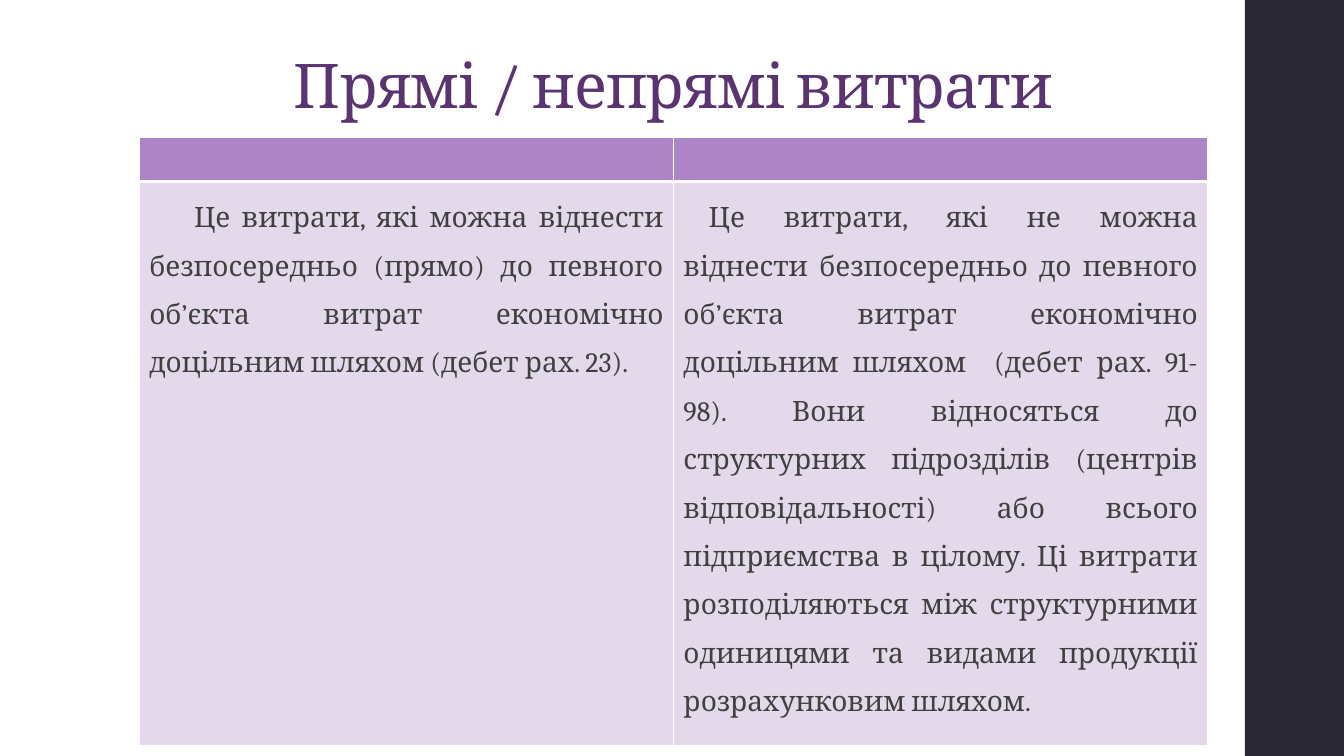
from lxml import etree
from pptx import Presentation
from pptx import util as u
from pptx.dml.color import RGBColor
from pptx.enum import shapes, text
from pptx.oxml.ns import qn

FONT = "Cambria"
WHITE, DARK, PURPLE = "FFFFFF", "292834", "5A3471"
HEADER_FILL, BODY_FILL, BODY_TEXT = "AD84C6", "E3D9EA", "404040"
LEFT, WIDTH = 99.4, 763.2

DIRECT_COSTS = (
    "Це витрати, які можна віднести безпосередньо (прямо) до певного "
    "об’єкта витрат економічно доцільним шляхом (дебет рах. 23)."
)
INDIRECT_COSTS = (
    "Це витрати, які не можна віднести безпосередньо до певного об’єкта "
    "витрат економічно доцільним шляхом  (дебет рах. 91-98). Вони "
    "відносяться до структурних підрозділів (центрів відповідальності) "
    "або всього підприємства в цілому. Ці витрати розподіляються між "
    "структурними одиницями та видами продукції розрахунковим шляхом."
)


def colour(value):
    return RGBColor.from_string(value)


def set_all(target, values):
    for name, value in values.items():
        setattr(target, name, value)


def fill_solid(target, value):
    target.fill.solid()
    target.fill.fore_color.rgb = colour(value)


def write_paragraph(paragraph, content, size, text_colour, layout):
    set_all(paragraph, layout)
    run = paragraph.add_run()
    run.text = content
    set_all(run.font, {"name": FONT, "size": u.Pt(size)})
    run.font.color.rgb = colour(text_colour)
    return run


def add_side_band(slide):
    band = slide.shapes.add_shape(
        shapes.MSO_SHAPE.RECTANGLE, u.Pt(889.2), u.Pt(0), u.Pt(70.8), u.Pt(540))
    band.shadow.inherit = False
    fill_solid(band, DARK)
    band.line.fill.background()


def add_title(slide, content):
    box = slide.shapes.add_textbox(u.Pt(LEFT), u.Pt(28.8), u.Pt(WIDTH), u.Pt(62))
    set_all(box.text_frame, {
        "word_wrap": True, "vertical_anchor": text.MSO_ANCHOR.BOTTOM})
    run = write_paragraph(
        box.text_frame.paragraphs[0], content, 44, PURPLE,
        {"alignment": text.PP_ALIGN.CENTER, "line_spacing": 0.9})
    run.font._element.set("spc", "-50")


def set_borders(cell, widths):
    properties = cell._tc.get_or_add_tcPr()
    for position, (side, width) in enumerate(widths.items()):
        line = etree.Element(qn(f"a:ln{side}"), w=str(u.Pt(width)))
        solid = etree.SubElement(line, qn("a:solidFill"))
        etree.SubElement(solid, qn("a:srgbClr"), val=WHITE)
        properties.insert(position, line)


def add_cost_table(slide, columns):
    row_heights = (31.7, 385.9)
    frame = slide.shapes.add_table(
        2, len(columns), u.Pt(LEFT), u.Pt(97.9), u.Pt(WIDTH), u.Pt(sum(row_heights)))
    table = frame.table
    for row, height in zip(table.rows, row_heights):
        row.height = u.Pt(height)

    for index, (content, indent) in enumerate(columns):
        header, body = table.cell(0, index), table.cell(1, index)
        # Fills and white rules, thicker under the header
        fill_solid(header, HEADER_FILL)
        fill_solid(body, BODY_FILL)
        set_borders(header, {"L": 1, "R": 1, "T": 1, "B": 3})
        set_borders(body, {"L": 1, "R": 1, "T": 3, "B": 1})
        # Definition with a first-line indent
        paragraph = body.text_frame.paragraphs[0]
        write_paragraph(paragraph, content, 20, BODY_TEXT, {
            "alignment": text.PP_ALIGN.JUSTIFY, "line_spacing": 1.5})
        paragraph._p.get_or_add_pPr().set("indent", str(u.Pt(indent)))


def main():
    presentation = Presentation()
    set_all(presentation, {"slide_width": u.Pt(960), "slide_height": u.Pt(540)})
    slide = presentation.slides.add_slide(presentation.slide_layouts[6])
    add_side_band(slide)
    add_title(slide, "Прямі / непрямі витрати")
    add_cost_table(slide, [(DIRECT_COSTS, 32), (INDIRECT_COSTS, 18)])
    presentation.save("out.pptx")


if __name__ == "__main__":
    main()
